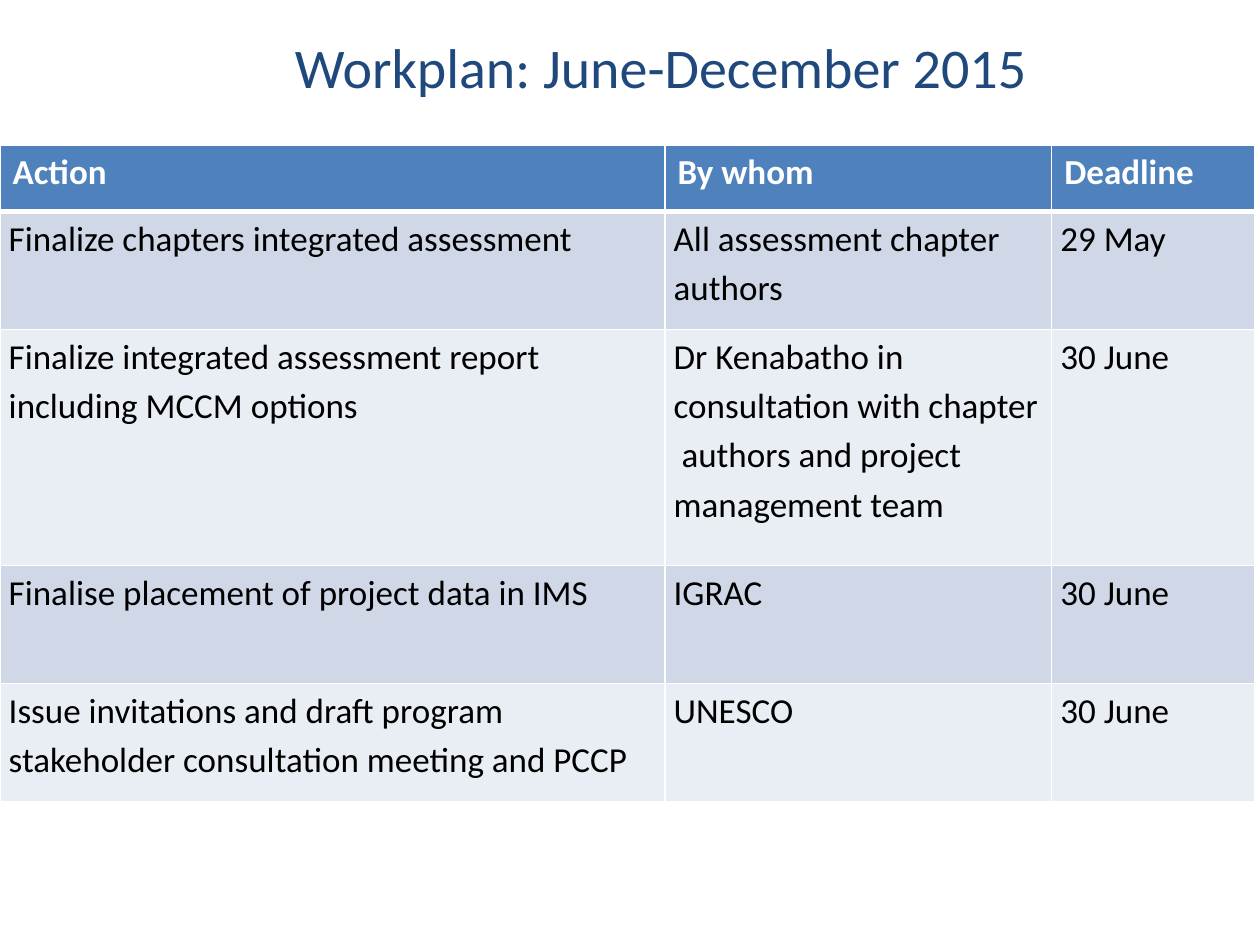
from dataclasses import dataclass

from pptx import Presentation
from pptx.dml.color import RGBColor as RGB
from pptx.enum.text import MSO_AUTO_SIZE as AutoSize
from pptx.oxml import parse_xml
from pptx.oxml.ns import nsdecls
from pptx.util import Pt


@dataclass(frozen=True)
class Theme:
    font: str = "Calibri"
    title: str = "1F497D"
    header: str = "4F81BD"
    bands: tuple = ("D0D8E8", "E9EDF4")
    text: str = "000000"
    light: str = "FFFFFF"
    title_size: float = 32
    table_size: float = 20
    line: float = 1
    header_line: float = 3


THEME = Theme()
TITLE = "Workplan: June-December 2015"
HEADER = ("Action", "By whom", "Deadline")
TASKS = (
    ("Finalize chapters integrated assessment",
     "All assessment chapter authors", "29 May"),
    ("Finalize integrated assessment report including MCCM options",
     "Dr Kenabatho in consultation with chapter  authors and project management team",
     "30 June"),
    ("Finalise placement of project data in IMS", "IGRAC", "30 June"),
    ("Issue invitations and draft program stakeholder consultation meeting and PCCP",
     "UNESCO", "30 June"),
)
COL_WIDTHS = (380, 221, 116)
HEADER_HEIGHT = 38
TASK_HEIGHT = 67.4
ROW_HEIGHTS = (HEADER_HEIGHT, TASK_HEIGHT, 2 * TASK_HEIGHT, TASK_HEIGHT, TASK_HEIGHT)
BODY_FORMAT = {"margin_left": Pt(5), "margin_right": Pt(5),
               "margin_top": 0, "margin_bottom": 0}


def set_attrs(obj, values):
    for name, value in values.items():
        setattr(obj, name, value)


def write(p, text, size, color, bold=False):
    r = p.add_run()
    r.text = text
    set_attrs(r.font, {"name": THEME.font, "size": Pt(size), "bold": bold})
    r.font.color.rgb = RGB.from_string(color)


def set_borders(cell, widths):
    tcPr = cell._tc.get_or_add_tcPr()
    for side in ("L", "R", "T", "B"):
        width = Pt(widths.get(side, THEME.line))
        tcPr.append(parse_xml(
            f'<a:ln{side} {nsdecls("a")} w="{width}"><a:solidFill>'
            f'<a:srgbClr val="{THEME.light}"/></a:solidFill></a:ln{side}>'))


def fill_cell(cell, text, row):
    is_header = row == 0
    p = cell.text_frame.paragraphs[0]
    if is_header:
        color, fill = THEME.light, THEME.header
    else:
        color, fill = THEME.text, THEME.bands[(row - 1) % 2]
        set_attrs(cell, BODY_FORMAT)
        p.line_spacing = 1.15
    write(p, text, THEME.table_size, color, bold=is_header)
    set_borders(cell, {0: {"B": THEME.header_line}, 1: {"T": THEME.header_line}}.get(row, {}))
    cell.fill.solid()
    cell.fill.fore_color.rgb = RGB.from_string(fill)


def add_workplan(slide, x, y, w, h):
    rows = (HEADER, *TASKS)
    table = slide.shapes.add_table(
        len(rows), len(HEADER), Pt(x), Pt(y), Pt(w), Pt(h)).table
    for col, width in zip(table.columns, COL_WIDTHS):
        col.width = Pt(width)
    for i, (row, height) in enumerate(zip(table.rows, ROW_HEIGHTS)):
        row.height = Pt(height)
        for cell, text in zip(row.cells, rows[i]):
            fill_cell(cell, text, i)


def add_title(slide, x, y, w, h):
    tf = slide.shapes.add_textbox(Pt(x), Pt(y), Pt(w), Pt(h)).text_frame
    set_attrs(tf, {"word_wrap": False, "auto_size": AutoSize.SHAPE_TO_FIT_TEXT})
    write(tf.paragraphs[0], TITLE, THEME.title_size, THEME.title)


def main():
    prs = Presentation()
    set_attrs(prs, {"slide_width": Pt(720), "slide_height": Pt(540)})
    slide = prs.slides.add_slide(prs.slide_layouts[6])
    add_workplan(slide, 0, 83, sum(COL_WIDTHS), sum(ROW_HEIGHTS))
    add_title(slide, 161.5, 15, 437, 46)
    prs.save("out.pptx")


if __name__ == "__main__":
    main()
